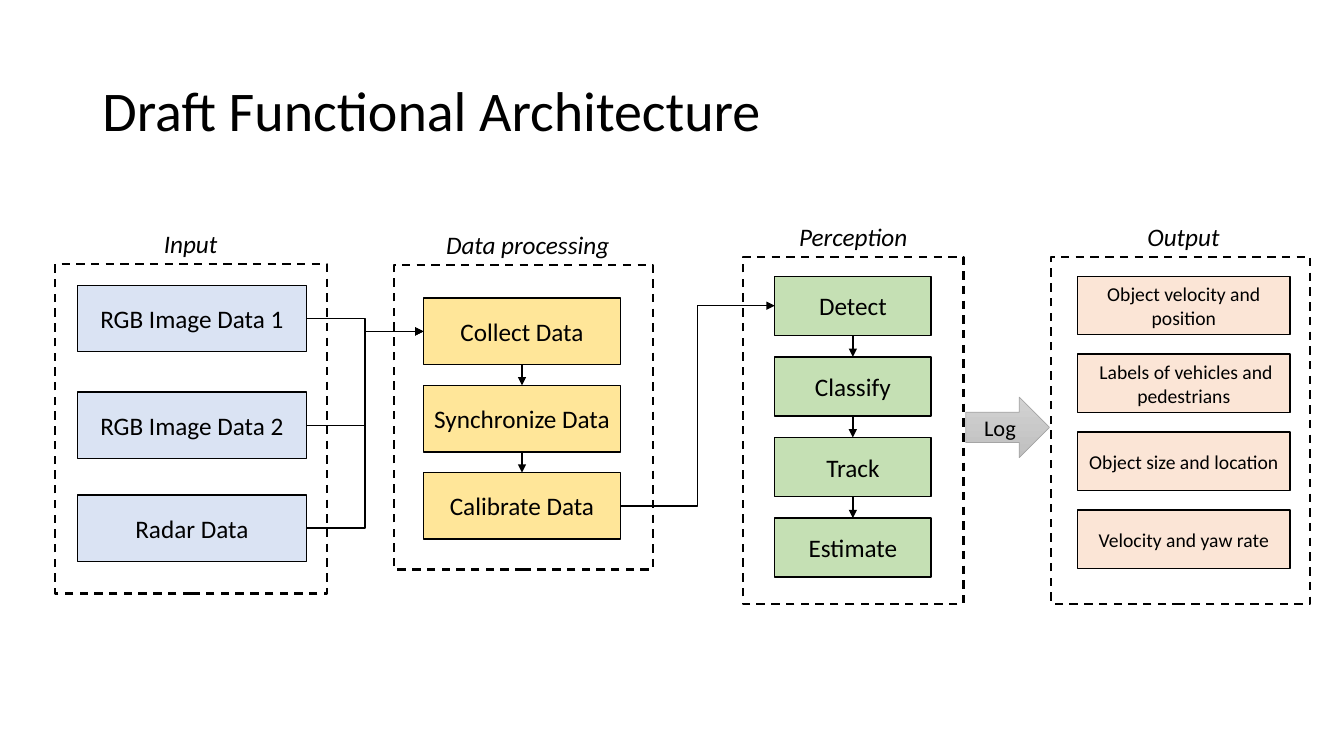
import pptx
import pptx.util
import pptx.dml.color
import pptx.enum.dml
import pptx.enum.shapes
import pptx.enum.text
import pptx.oxml
import pptx.oxml.ns

Pt = pptx.util.Pt
RGB = pptx.dml.color.RGBColor.from_string
SHAPE = pptx.enum.shapes.MSO_SHAPE
CONNECTOR = pptx.enum.shapes.MSO_CONNECTOR
ANCHOR = pptx.enum.text.MSO_ANCHOR
ALIGN = pptx.enum.text.PP_ALIGN
AUTO_SIZE = pptx.enum.text.MSO_AUTO_SIZE

COLORS = {
    "black": "000000", "input": "DAE3F3", "processing": "FFE699",
    "perception": "C5E0B4", "output": "FBE5D6",
    "log_top": "D2D2D2", "log_bottom": "C0C0C0", "log_line": "A5A5A5",
}

deck = pptx.Presentation()
deck.slide_width, deck.slide_height = Pt(960), Pt(540)
slide = deck.slides.add_slide(deck.slide_layouts[5])


def write(shape, text, size, italic=False, align=ALIGN.CENTER):
    paragraph = shape.text_frame.paragraphs[0]
    paragraph.alignment = align
    run = paragraph.add_run()
    run.text = text
    run.font.name, run.font.size, run.font.italic = "Calibri", Pt(size), italic
    run.font.color.rgb = RGB(COLORS["black"])


def connect(kind, start, start_side, end, end_side, width):
    link = slide.shapes.add_connector(kind, 0, 0, 0, 0)
    link.begin_connect(start, start_side)
    link.end_connect(end, end_side)
    link.line.width = Pt(width)
    link.line.color.rgb = RGB(COLORS["black"])
    line_xml = link.line._get_or_add_ln()
    line_xml.append(pptx.oxml.parse_xml(
        f'<a:tailEnd {pptx.oxml.ns.nsdecls("a")} type="triangle"/>'))
    link._element.spPr.append(pptx.oxml.parse_xml(
        f'<a:effectLst {pptx.oxml.ns.nsdecls("a")}/>'))


# Title
title = slide.shapes.title
title.left, title.top, title.width, title.height = Pt(66), Pt(28.8), Pt(828), Pt(104.4)
title.text_frame.vertical_anchor = ANCHOR.MIDDLE
title.text_frame.auto_size = AUTO_SIZE.NONE
write(title, "Draft Functional Architecture", 40, align=ALIGN.LEFT)
title.text_frame.paragraphs[0].line_spacing = 0.9

# Stages: heading (text, centre, width), frame, then box left, width, height, tops
stages = {
    "input": (("Input", 136.2, 53.3), (39.6, 188.6, 193.7, 235.4),
              (55.4, 163.4, 47.5), (203.8, 280.1, 353.5), 18,
              ("RGB Image Data 1", "RGB Image Data 2", "Radar Data")),
    "processing": (("Data processing", 377, 131.8), (281.5, 189.4, 185, 217.4),
                   (302.4, 141, 47.5), [213 + 62.3 * i for i in range(3)], 18,
                   ("Collect Data", "Synchronize Data", "Calibrate Data")),
    "perception": (("Perception", 609.5, 94.3), (530.6, 183.6, 157.7, 247.7),
                   (553.4, 111.6, 42.2), [197.3 + 57.6 * i for i in range(4)], 18,
                   ("Detect", "Classify", "Track", "Estimate")),
    "output": (("Output", 845.3, 66.2), (751, 183.6, 185, 247.7),
               (769.7, 151.9, 41.8), [197.3 + 55.7 * i for i in range(4)], 14,
               ("Object velocity and position", " Labels of vehicles and pedestrians",
                "Object size and location", "Velocity and yaw rate")),
}
steps = {}
for stage, (heading, frame_area, box_area, tops, size, names) in stages.items():
    # Dashed frame
    frame = slide.shapes.add_shape(SHAPE.RECTANGLE, *map(Pt, frame_area))
    frame.shadow.inherit = False
    frame.fill.background()
    frame.line.color.rgb = RGB(COLORS["black"])
    frame.line.width = Pt(1.5)
    frame.line.dash_style = pptx.enum.dml.MSO_LINE.DASH

    # Heading above the frame
    text, centre, width = heading
    label = slide.shapes.add_textbox(Pt(centre - width / 2), Pt(frame_area[1] - 29.2),
                                     Pt(width), Pt(29))
    label.text_frame.word_wrap = False
    label.text_frame.auto_size = AUTO_SIZE.SHAPE_TO_FIT_TEXT
    write(label, text, 18, italic=True)

    # Boxes inside the frame
    left, width, height = box_area
    steps[stage] = []
    for name, top in zip(names, tops):
        box = slide.shapes.add_shape(SHAPE.RECTANGLE, Pt(left), Pt(top), Pt(width), Pt(height))
        box.shadow.inherit = False
        box.fill.solid()
        box.fill.fore_color.rgb = RGB(COLORS[stage])
        box.line.color.rgb = RGB(COLORS["black"])
        box.line.width = Pt(1)
        box.text_frame.word_wrap = True
        box.text_frame.vertical_anchor = ANCHOR.MIDDLE
        write(box, name, size)
        steps[stage].append(box)

# Arrows down through a stage
for stage in ("processing", "perception"):
    for upper, lower in zip(steps[stage], steps[stage][1:]):
        connect(CONNECTOR.STRAIGHT, upper, 2, lower, 0, 1.5)

# Arrows from stage to stage
for source in steps["input"]:
    connect(CONNECTOR.ELBOW, source, 3, steps["processing"][0], 1, 1)
connect(CONNECTOR.ELBOW, steps["processing"][-1], 3, steps["perception"][0], 1, 1)

# Log arrow
log = slide.shapes.add_shape(SHAPE.RIGHT_ARROW, Pt(689.8), Pt(283.7), Pt(59.8), Pt(43.2))
log.shadow.inherit = False
log.fill.gradient()
log.fill.gradient_angle = 270
for stop, shade in zip(log.fill.gradient_stops, ("log_top", "log_bottom")):
    stop.color.rgb = RGB(COLORS[shade])
log.line.color.rgb = RGB(COLORS["log_line"])
log.line.width = Pt(0.5)
log.text_frame.word_wrap = True
log.text_frame.vertical_anchor = ANCHOR.MIDDLE
write(log, "Log", 16)

deck.save("out.pptx")
